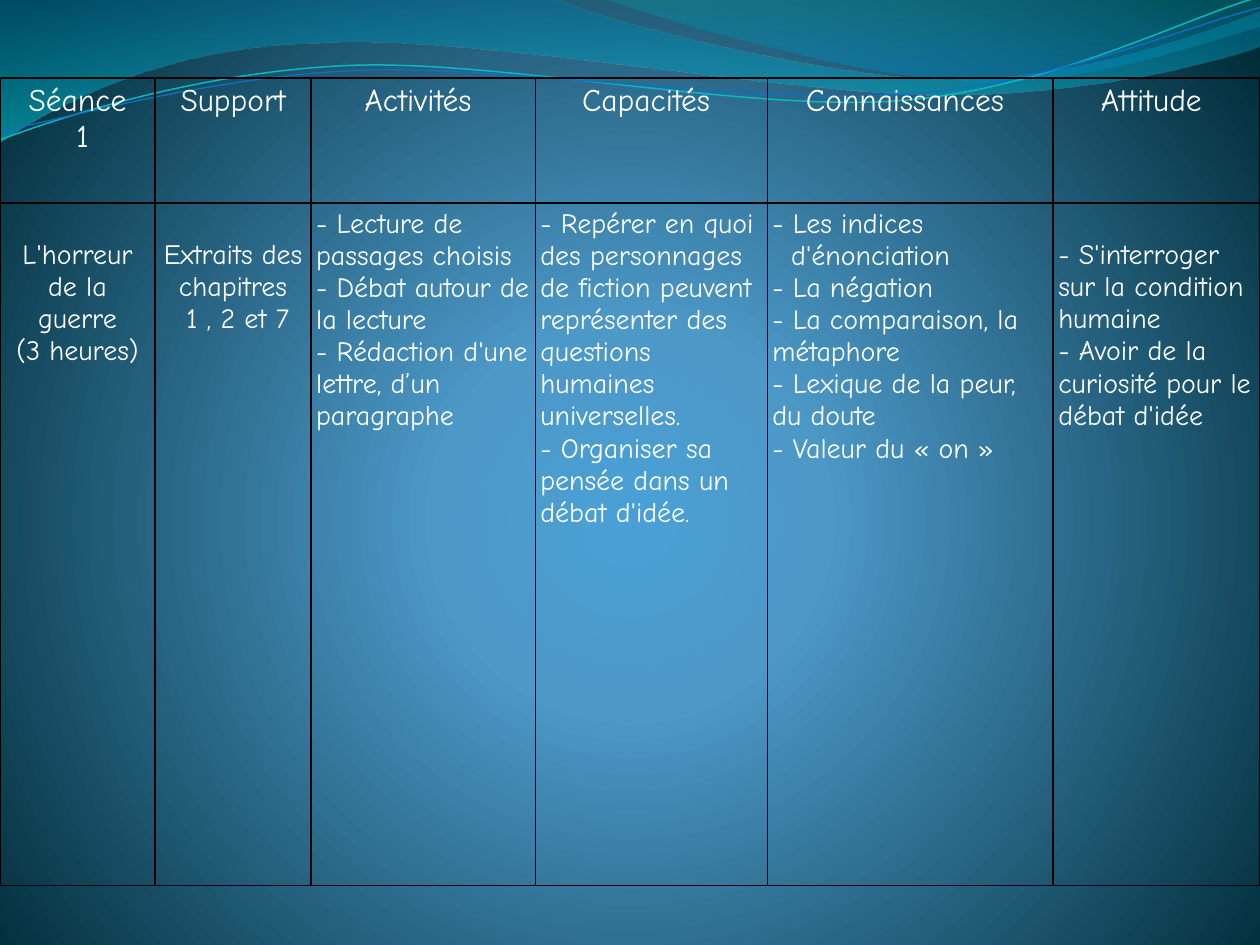
from math import cos, radians, sin

from pptx import Presentation
from pptx.dml.color import RGBColor as Rgb
from pptx.enum.text import PP_ALIGN as Align
from pptx.oxml import parse_xml
from pptx.oxml.ns import nsdecls, qn
from pptx.util import Inches, Pt

COLORS = {
    "text": "FFFFFF", "border": "000000",
    "glow": "4AA0D6", "sky": "4C98C7", "night": "002C38",
    "deep": "0074A1", "aqua": "00C6CF", "teal": "00A1A9", "azure": "008BBF",
    "cyan_line": "0AB8BF", "blue_line": "0F6FC6",
}
DOWNWARD = '<a:lin ang="5400000" scaled="0"/>'
RADIAL = ('<a:path path="circle"><a:fillToRect l="10000" t="110000" '
          'r="10000" b="100000"/></a:path>')

WAVES = [
    ([(0, 0), (4.4, -0.01),
      (4.76, 0.17, 6.64, 0.63, 7.58, 0.63), (8.53, 0.63, 9.58, 0.26, 10, 0.09),
      (10.01, 0.36),
      (9.83, 0.44, 8.7, 0.76, 7.46, 0.75), (6.22, 0.75, 3.82, 0.28, 2.57, 0.34),
      (1.29, 0.36, 0.46, 0.83, -0.01, 1.13), (0, 0)],
     [(0, "deep", 45), (100, "aqua", 55)]),
    ([(4.79, -0.01),
      (5.09, 0.11, 6.82, 0.62, 7.69, 0.65), (8.56, 0.69, 9.61, 0.32, 10, 0.21),
      (10, 0), (4.79, -0.01)],
     [(0, "teal", 30), (80, "azure", 45)]),
]
TILT = 2.7
RIBBONS = [
    ([(0, 1.11), (0.48, 0.93, 1.58, 0.57, 2.77, 0.52),
      (3.95, 0.47, 5.93, 0.89, 7.13, 0.8), (8.33, 0.71, 9.38, 0.15, 9.98, -0.02)],
     (4.99, 0.58), "cyan_line", 0.85),
    ([(0, 1.04), (0.47, 0.96, 1.64, 0.61, 2.83, 0.56),
      (4.03, 0.51, 5.97, 0.84, 7.17, 0.75), (8.36, 0.67, 9.41, 0.21, 10, 0.06)],
     (5, 0.59), "blue_line", 0.75),
]

COLUMN_WIDTHS = [1.23, 1.24, 1.78, 1.84, 2.27, 1.64]
ROW_HEIGHTS = [0.99, 5.42]
HEADERS = [["Séance", " 1"], ["Support"], ["Activités "], ["Capacités "],
           ["Connaissances "], ["Attitude "]]
SESSION = [
    ["L'horreur de la guerre", "(3 heures)"],
    ["Extraits des chapitres", " 1 , 2 et 7"],
    ["- Lecture de passages choisis", "- Débat autour de la lecture",
     "- Rédaction d'une lettre, d’un paragraphe"],
    ["- Repérer en quoi des personnages de fiction peuvent représenter "
     "des questions humaines universelles.",
     "- Organiser sa pensée dans un débat d'idée."],
    ["- Les indices", "d'énonciation", "- La négation",
     "- La comparaison, la métaphore", "- Lexique de la peur, du doute",
     "- Valeur du « on »"],
    ["- S'interroger sur la condition humaine",
     "- Avoir de la curiosité pour le débat d'idée"],
]
CENTERED_COLUMNS = (0, 1)
LOWERED_COLUMNS = (0, 1, 5)
INDENTED_LINES = ("d'énonciation",)


def pairs(step):
    return list(zip(step[::2], step[1::2]))


def turn(steps, center, degrees):
    (cx, cy), angle = center, radians(degrees)
    turned = []
    for step in steps:
        flat = []
        for x, y in pairs(step):
            flat.append(cx + (x - cx) * cos(angle) - (y - cy) * sin(angle))
            flat.append(cy + (x - cx) * sin(angle) + (y - cy) * cos(angle))
        turned.append(tuple(flat))
    return turned


class SlideBuilder:
    font = "Comic Neue"
    inset = 0.04

    def __init__(self, page):
        self.page = page

    def gradient(self, fill, owner, stops, direction):
        fill.gradient()
        marks = "".join(
            f'<a:gs pos="{place * 1000}"><a:srgbClr val="{COLORS[color]}">'
            f'<a:alpha val="{opacity * 1000}"/></a:srgbClr></a:gs>'
            for place, color, opacity in stops)
        old = owner.find(".//" + qn("a:gradFill"))
        old.getparent().replace(old, parse_xml(
            f'<a:gradFill {nsdecls("a")} rotWithShape="1">'
            f'<a:gsLst>{marks}</a:gsLst>{direction}</a:gradFill>'))

    def background(self, stops):
        self.gradient(self.page.background.fill, self.page.element, stops, RADIAL)

    def outline(self, steps, close):
        ends = [(Inches(step[-2]), Inches(step[-1])) for step in steps]
        builder = self.page.shapes.build_freeform(*ends[0], scale=1)
        builder.add_line_segments(ends[1:], close=close)
        shape = builder.convert_to_shape()
        shape.shadow.inherit = False
        segments = list(shape.element.iter(qn("a:lnTo")))
        for step, segment in zip(steps[1:], segments):
            if len(step) == 6:
                points = "".join(
                    f'<a:pt x="{Inches(x) - shape.left}" y="{Inches(y) - shape.top}"/>'
                    for x, y in pairs(step))
                segment.getparent().replace(segment, parse_xml(
                    f'<a:cubicBezTo {nsdecls("a")}>{points}</a:cubicBezTo>'))
        return shape

    def wave(self, steps, stops):
        shape = self.outline(steps, True)
        shape.line.fill.background()
        self.gradient(shape.fill, shape.element, stops, DOWNWARD)

    def ribbon(self, steps, center, color, width):
        shape = self.outline(turn(steps, center, TILT), False)
        shape.rotation = 360 - TILT
        shape.fill.background()
        shape.line.color.rgb = Rgb.from_string(COLORS[color])
        shape.line.width = Pt(width)

    def table(self, left, top, widths, heights):
        frame = self.page.shapes.add_table(
            len(heights), len(widths), Inches(left), Inches(top),
            Inches(sum(widths)), Inches(sum(heights)))
        grid = frame.table
        grid.first_row = grid.horz_banding = False
        for column, width in zip(grid.columns, widths):
            column.width = Inches(width)
        for row, height in zip(grid.rows, heights):
            row.height = Inches(height)
        return grid

    def cell(self, cell, lines, size, align, drop=0):
        cell.margin_left = cell.margin_right = cell.margin_bottom = Inches(self.inset)
        cell.margin_top = Inches(self.inset + drop)
        cell.fill.background()
        self.borders(cell)
        box = cell.text_frame
        for number, line in enumerate(lines):
            para = box.add_paragraph() if number else box.paragraphs[0]
            para.alignment = align
            if line in INDENTED_LINES:
                para._p.get_or_add_pPr().set("marL", str(Inches(0.15)))
            span = para.add_run()
            span.text = line
            span.font.name = self.font
            span.font.size = Pt(size)
            span.font.color.rgb = Rgb.from_string(COLORS["text"])

    def borders(self, cell):
        properties = cell._tc.get_or_add_tcPr()
        for position, side in enumerate(("lnL", "lnR", "lnT", "lnB")):
            properties.insert(position, parse_xml(
                f'<a:{side} {nsdecls("a")} w="{Pt(1)}"><a:solidFill>'
                f'<a:srgbClr val="{COLORS["border"]}"/></a:solidFill></a:{side}>'))


def main():
    deck = Presentation()
    deck.slide_width, deck.slide_height = Inches(10), Inches(7.5)
    builder = SlideBuilder(deck.slides.add_slide(deck.slide_layouts[6]))
    builder.background([(0, "glow", 100), (25, "sky", 100), (100, "night", 100)])
    for wave in WAVES:
        builder.wave(*wave)
    for ribbon in RIBBONS:
        builder.ribbon(*ribbon)
    grid = builder.table(0, 0.62, COLUMN_WIDTHS, ROW_HEIGHTS)
    for column, (header, lines) in enumerate(zip(HEADERS, SESSION)):
        builder.cell(grid.cell(0, column), header, 18, Align.CENTER)
        align = Align.CENTER if column in CENTERED_COLUMNS else Align.LEFT
        drop = 0.25 if column in LOWERED_COLUMNS else 0
        builder.cell(grid.cell(1, column), lines, 16, align, drop)
    deck.save("out.pptx")


if __name__ == "__main__":
    main()
